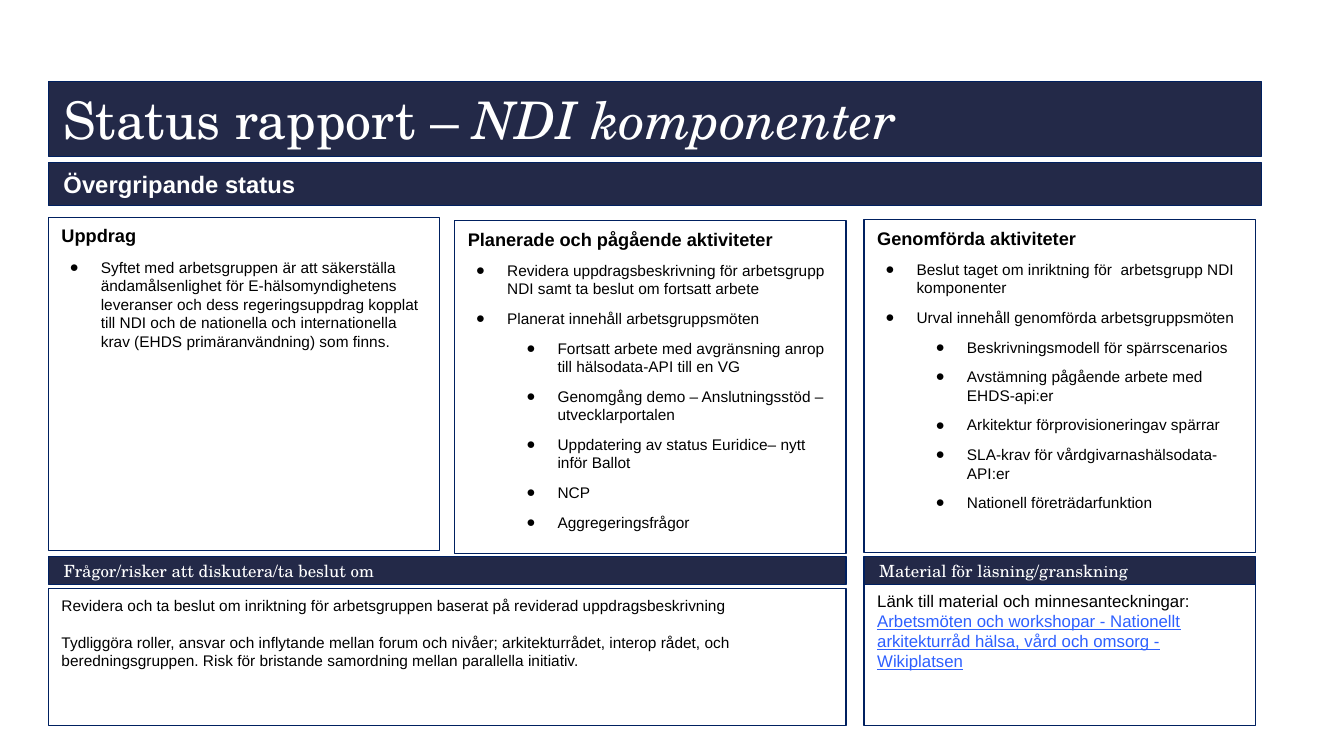
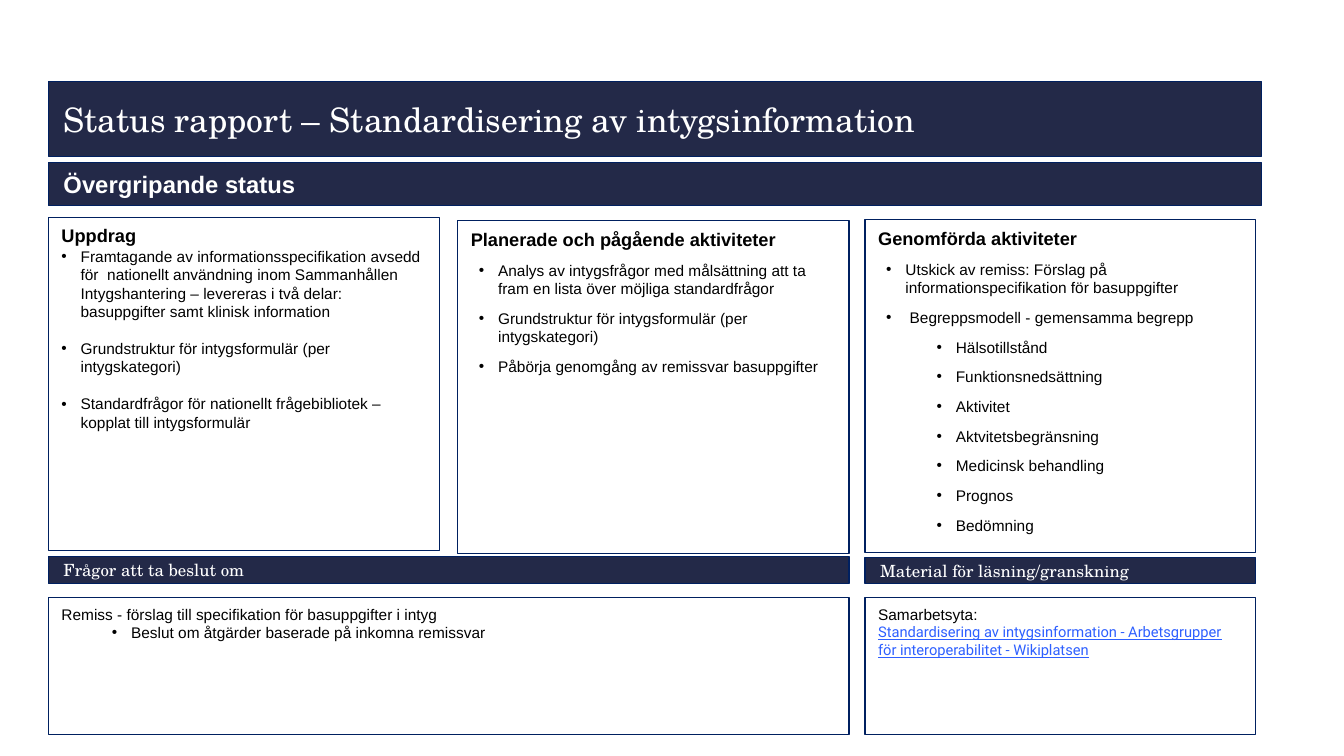
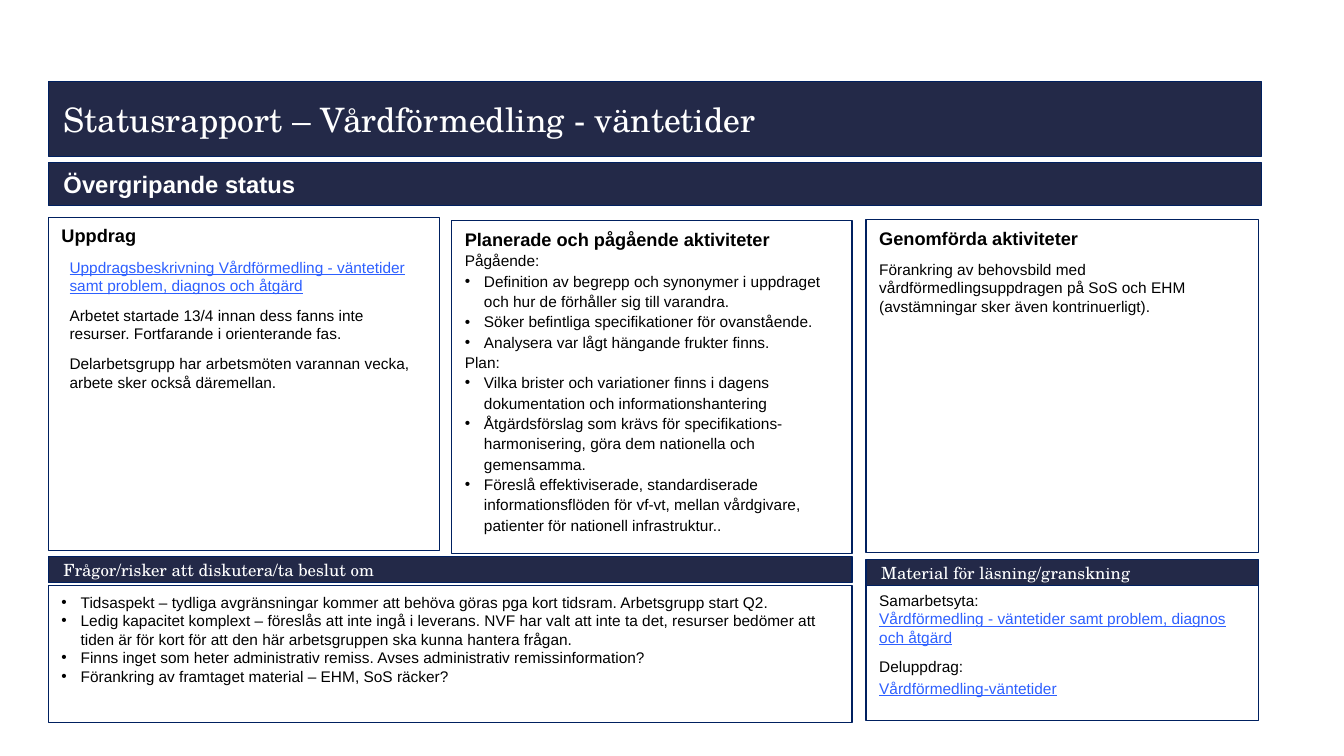
from dataclasses import dataclass
from functools import partial

from lxml import etree
from pptx import Presentation
from pptx import util as u
from pptx.dml.color import RGBColor
from pptx.enum import shapes, text
from pptx.oxml import ns

NAVY, BORDER, WHITE, BLACK, LINK = "232948", "002060", "FFFFFF", "000000", "2E60FF"
SANS, SERIF = "Arial", "TeX Gyre Schola"
LEFT, FULL_WIDTH, COLUMN_WIDTH, COLUMN_HEIGHT = 0.48, 12.03, 3.88, 3.3
COMPARISON_LAYOUT = 4
BLANK_LINE = 13.2


@dataclass
class Para:
    """One paragraph; margin and hanging are in inches, before and size in points."""
    text: str
    size: float = 11
    bold: bool = False
    color: str = BLACK
    font: str = SANS
    margin: float = 0
    hanging: float = 0
    bullet: str = ""
    level: int = 0
    before: float = 0
    spacing: float = 1.0


heading = partial(Para, size=13, bold=True)
link = partial(Para, color=LINK)
dot = partial(Para, bullet="●", margin=0.39, hanging=0.31, before=8)
sub_dot = partial(dot, margin=0.89, level=1)
point = partial(Para, bullet="•", margin=0.27, hanging=0.19, before=8)
sub_point = partial(point, margin=0.77, level=1)
tight_point = partial(point, margin=0.19, before=0)
airy = partial(Para, spacing=1.1)
airy_point = partial(tight_point, spacing=1.1)


def rgb(value):
    return RGBColor.from_string(value)


def frame(shape, box, fill, inset, anchor):
    """Place, fill and outline a shape, and return its empty text frame."""
    shape.left, shape.top, shape.width, shape.height = map(u.Inches, box)
    shape.fill.solid()
    shape.fill.fore_color.rgb = rgb(fill)
    shape.line.color.rgb = rgb(BORDER)
    shape.line.width = u.Pt(1)
    body = shape.text_frame
    body.word_wrap = True
    body.auto_size = text.MSO_AUTO_SIZE.NONE
    body.vertical_anchor = anchor
    body.margin_left = body.margin_right = u.Inches(inset[0])
    body.margin_top = body.margin_bottom = u.Inches(inset[1])
    return body


def add_run(paragraph, words, size, font, color, bold=False, italic=False, underline=False):
    run = paragraph.add_run()
    run.text = words
    run.font.size = u.Pt(size)
    run.font.name = font
    run.font.color.rgb = rgb(color)
    run.font.bold, run.font.italic, run.font.underline = bold, italic, underline


def set_bullet(paragraph, para):
    """Set indents and the bullet, or switch off the inherited ones."""
    properties = paragraph._p.get_or_add_pPr()
    properties.set("marL", str(u.Inches(para.margin)))
    properties.set("indent", str(-u.Inches(para.hanging)))
    if para.bullet:
        etree.SubElement(properties, ns.qn("a:buFont")).set("typeface", SANS)
        etree.SubElement(properties, ns.qn("a:buChar")).set("char", para.bullet)
    else:
        etree.SubElement(properties, ns.qn("a:buNone"))


def panel(shape, box, paras):
    body = frame(shape, box, WHITE, (0.13, 0.07), text.MSO_ANCHOR.TOP)
    for index, para in enumerate(paras):
        paragraph = body.add_paragraph() if index else body.paragraphs[0]
        set_bullet(paragraph, para)
        paragraph.level = para.level
        paragraph.alignment = text.PP_ALIGN.LEFT
        paragraph.space_before = u.Pt(para.before)
        paragraph.space_after = u.Pt(0)
        paragraph.line_spacing = para.spacing
        add_run(paragraph, para.text, para.size, para.font, para.color,
                para.bold, underline=para.color == LINK)


def band(shape, box, words, size, font=SERIF, bold=False, emphasis=""):
    """Dark strip with white text; emphasis is an italic ending."""
    body = frame(shape, box, NAVY, (0.15, 0.13), text.MSO_ANCHOR.MIDDLE)
    paragraph = body.paragraphs[0]
    paragraph.alignment = text.PP_ALIGN.LEFT
    add_run(paragraph, words, size, font, WHITE, bold)
    if emphasis:
        add_run(paragraph, emphasis, size, font, WHITE, italic=True)


def rectangle(slide):
    shape = slide.shapes.add_shape(shapes.MSO_SHAPE.RECTANGLE, 0, 0, 0, 0)
    shape.shadow.inherit = False
    return shape


def status_slide(prs, title, mission, planned, done, questions, material,
                 middle, right, strips, panels,
                 title_size=24, emphasis="", questions_title="Frågor/risker att diskutera/ta beslut om"):
    """middle and right are (left, width); strips and panels are (top, height)
    of the lower headers and boxes, for questions and then for material."""
    slide = prs.slides.add_slide(prs.slide_layouts[COMPARISON_LAYOUT])
    bodies = slide.placeholders
    band(slide.shapes.title, (LEFT, 0.81, FULL_WIDTH, 0.74), title, title_size, emphasis=emphasis)
    band(rectangle(slide), (LEFT, 1.61, FULL_WIDTH, 0.43), "Övergripande status", 17, SANS, True)

    columns = (
        (1, (LEFT, COLUMN_WIDTH), 2.16, "Uppdrag", mission),
        (2, middle, 2.19, "Planerade och pågående aktiviteter", planned),
        (3, right, 2.18, "Genomförda aktiviteter", done),
    )
    for idx, (left, width), top, name, paras in columns:
        panel(bodies[idx], (left, top, width, COLUMN_HEIGHT), [heading(name), *paras])

    wide = (LEFT, sum(middle) - LEFT)
    lower = (
        (bodies[4], wide, questions_title, questions),
        (rectangle(slide), right, "Material för läsning/granskning", material),
    )
    for (shape, (left, width), name, paras), strip, box in zip(lower, strips, panels):
        panel(shape, (left, box[0], width, box[1]), paras)
        band(rectangle(slide), (left, strip[0], width, strip[1]), name, 12)


def components_slide(prs):
    status_slide(
        prs, "Status rapport – ", title_size=37, emphasis="NDI komponenter",
        middle=(4.51, 3.88), right=(8.57, 3.88),
        strips=((5.52, 0.28), (5.52, 0.28)), panels=((5.84, 1.36), (5.79, 1.41)),
        mission=[dot(
            "Syftet med arbetsgruppen är att säkerställa ändamålsenlighet för "
            "E-hälsomyndighetens leveranser och dess regeringsuppdrag kopplat till NDI och de "
            "nationella och internationella krav (EHDS primäranvändning) som finns.")],
        planned=[
            dot("Revidera uppdragsbeskrivning för arbetsgrupp NDI samt ta beslut om fortsatt arbete"),
            dot("Planerat innehåll arbetsgruppsmöten"),
            sub_dot("Fortsatt arbete med avgränsning anrop till hälsodata-API till en VG"),
            sub_dot("Genomgång demo – Anslutningsstöd – utvecklarportalen"),
            sub_dot("Uppdatering av status Euridice– nytt inför Ballot"),
            sub_dot("NCP"),
            sub_dot("Aggregeringsfrågor")],
        done=[
            dot("Beslut taget om inriktning för  arbetsgrupp NDI komponenter"),
            dot("Urval innehåll genomförda arbetsgruppsmöten"),
            sub_dot("Beskrivningsmodell för spärrscenarios"),
            sub_dot("Avstämning pågående arbete med EHDS-api:er"),
            sub_dot("Arkitektur förprovisioneringav spärrar"),
            sub_dot("SLA-krav för vårdgivarnashälsodata-API:er"),
            sub_dot("Nationell företrädarfunktion")],
        questions=[
            Para("Revidera och ta beslut om inriktning för arbetsgruppen baserat på "
                 "reviderad uppdragsbeskrivning"),
            Para("Tydliggöra roller, ansvar och inflytande mellan forum och nivåer; "
                 "arkitekturrådet, interop rådet, och beredningsgruppen. Risk för bristande "
                 "samordning mellan parallella initiativ.", before=BLANK_LINE)],
        material=[
            Para("Länk till material och minnesanteckningar:", size=12),
            link("Arbetsmöten och workshopar - Nationellt arkitekturråd hälsa, vård och "
                 "omsorg - Wikiplatsen", size=12)])


def certificates_slide(prs):
    status_slide(
        prs, "Status rapport – Standardisering av intygsinformation",
        questions_title="Frågor att ta beslut om",
        middle=(4.54, 3.88), right=(8.58, 3.87),
        strips=((5.52, 0.27), (5.53, 0.26)), panels=((5.93, 1.36), (5.93, 1.36)),
        mission=[
            tight_point("Framtagande av informationsspecifikation avsedd för  nationellt "
                        "användning inom Sammanhållen Intygshantering – levereras i två delar: "
                        "basuppgifter samt klinisk information"),
            tight_point("Grundstruktur för intygsformulär (per intygskategori)", before=BLANK_LINE),
            tight_point("Standardfrågor för nationellt frågebibliotek – kopplat till "
                        "intygsformulär", before=BLANK_LINE)],
        planned=[
            point("Analys av intygsfrågor med målsättning att ta fram en lista över möjliga "
                  "standardfrågor"),
            point("Grundstruktur för intygsformulär (per intygskategori)"),
            point("Påbörja genomgång av remissvar basuppgifter")],
        done=[
            point("Utskick av remiss: Förslag på informationspecifikation för basuppgifter"),
            point(" Begreppsmodell - gemensamma begrepp"),
            *map(sub_point, ("Hälsotillstånd", "Funktionsnedsättning", "Aktivitet",
                             "Aktvitetsbegränsning", "Medicinsk behandling", "Prognos",
                             "Bedömning"))],
        questions=[
            Para("Remiss - förslag till specifikation för basuppgifter i intyg"),
            tight_point("Beslut om åtgärder baserade på inkomna remissvar", margin=0.69, level=1)],
        material=[
            Para("Samarbetsyta:"),
            link("Standardisering av intygsinformation - Arbetsgrupper för interoperabilitet - "
                 "Wikiplatsen", size=10.5, font="Roboto")])


def waiting_times_slide(prs):
    status_slide(
        prs, "Statusrapport – Vårdförmedling - väntetider",
        middle=(4.48, 3.97), right=(8.59, 3.89),
        strips=((5.52, 0.26), (5.55, 0.26)), panels=((5.81, 1.36), (5.79, 1.36)),
        mission=[
            link("Uppdragsbeskrivning Vårdförmedling - väntetider samt problem, diagnos och åtgärd",
                 margin=0.08, before=8),
            Para("Arbetet startade 13/4 innan dess fanns inte resurser. Fortfarande i "
                 "orienterande fas.", margin=0.08, before=8),
            Para("Delarbetsgrupp har arbetsmöten varannan vecka, arbete sker också däremellan.",
                 margin=0.08, before=8)],
        planned=[
            airy("Pågående:"),
            airy_point("Definition av begrepp och synonymer i uppdraget och hur de förhåller sig "
                       "till varandra."),
            airy_point("Söker befintliga specifikationer för ovanstående."),
            airy_point("Analysera var lågt hängande frukter finns."),
            airy("Plan:"),
            airy_point("Vilka brister och variationer finns i dagens dokumentation och "
                       "informationshantering"),
            airy_point("Åtgärdsförslag som krävs för specifikations-harmonisering, göra dem "
                       "nationella och gemensamma."),
            airy_point("Föreslå effektiviserade, standardiserade informationsflöden för vf-vt, "
                       "mellan vårdgivare, patienter för nationell infrastruktur..")],
        done=[Para("Förankring av behovsbild med vårdförmedlingsuppdragen på SoS och EHM "
                   "(avstämningar sker även kontrinuerligt).", before=8)],
        questions=[
            tight_point("Tidsaspekt – tydliga avgränsningar kommer att behöva göras pga kort "
                        "tidsram. Arbetsgrupp start Q2."),
            tight_point("Ledig kapacitet komplext – föreslås att inte ingå i leverans. NVF har "
                        "valt att inte ta det, resurser bedömer att tiden är för kort för att "
                        "den här arbetsgruppen ska kunna hantera frågan."),
            tight_point("Finns inget som heter administrativ remiss. Avses administrativ "
                        "remissinformation?"),
            tight_point("Förankring av framtaget material – EHM, SoS räcker?")],
        material=[
            Para("Samarbetsyta:"),
            link("Vårdförmedling - väntetider samt problem, diagnos och åtgärd"),
            Para("Deluppdrag:", before=8),
            link("Vårdförmedling-väntetider", before=2)])


def main():
    prs = Presentation()
    prs.slide_width, prs.slide_height = u.Inches(13.33), u.Inches(7.5)
    components_slide(prs)
    certificates_slide(prs)
    waiting_times_slide(prs)
    prs.save("out.pptx")


if __name__ == "__main__":
    main()
